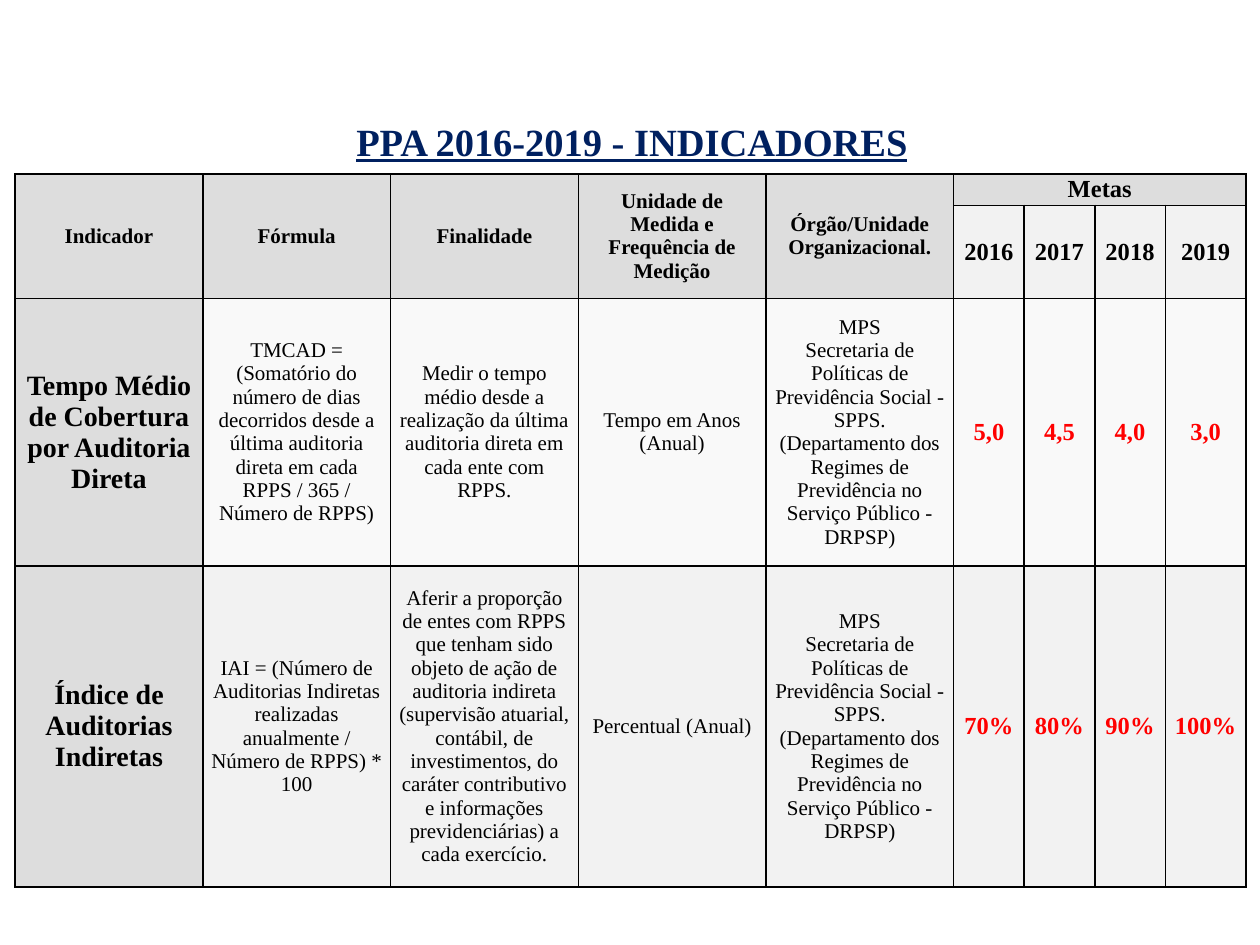
import pptx
import pptx.util
import pptx.dml.color
import pptx.enum.text
import pptx.oxml
import pptx.oxml.ns
from pptx.util import Inches

NAVY = pptx.dml.color.RGBColor(0x00, 0x20, 0x60)
BLACK = pptx.dml.color.RGBColor(0x00, 0x00, 0x00)
RED = pptx.dml.color.RGBColor(0xFF, 0x00, 0x00)
HEADER_GREY = pptx.dml.color.RGBColor(0xDD, 0xDD, 0xDD)
LIGHT_GREY = pptx.dml.color.RGBColor(0xF2, 0xF2, 0xF2)
PALE_GREY = pptx.dml.color.RGBColor(0xF9, 0xF9, 0xF9)


def write_text(frame, text, size=12, bold=False, color=BLACK, underline=None, spacing=None):
    """Write centred text, one paragraph for each line."""
    frame.text = text
    for paragraph in frame.paragraphs:
        paragraph.alignment = pptx.enum.text.PP_ALIGN.CENTER
        paragraph.line_spacing = spacing
        for run in paragraph.runs:
            run.font.name = "Times New Roman"
            run.font.size = pptx.util.Pt(size)
            run.font.bold = bold
            run.font.underline = underline
            run.font.color.rgb = color


def add_borders(cell):
    """Give a cell thin black lines on all four sides."""
    properties = cell._tc.get_or_add_tcPr()
    for position, side in enumerate(("lnL", "lnR", "lnT", "lnB")):
        properties.insert(position, pptx.oxml.parse_xml(
            f'<a:{side} {pptx.oxml.ns.nsdecls("a")} w="12700"><a:solidFill>'
            f'<a:srgbClr val="{BLACK}"/></a:solidFill></a:{side}>'))


presentation = pptx.Presentation()
presentation.slide_width = Inches(10)
presentation.slide_height = Inches(7.5)
slide = presentation.slides.add_slide(presentation.slide_layouts[5])

# Title
title = slide.shapes.title
title.left, title.top = Inches(0), Inches(0.92)
title.width, title.height = Inches(10.03), Inches(0.44)
title_frame = title.text_frame
title_frame.margin_left = title_frame.margin_right = Inches(0.07)
title_frame.margin_top = title_frame.margin_bottom = Inches(0.04)
title_frame.vertical_anchor = pptx.enum.text.MSO_ANCHOR.MIDDLE
write_text(title_frame, "PPA 2016-2019 - INDICADORES", size=22, bold=True,
           color=NAVY, underline=True, spacing=0.9)

# Table contents
agency = ("MPS\nSecretaria de Políticas de Previdência Social - SPPS.\n"
          "(Departamento dos Regimes de Previdência no Serviço Público - DRPSP)")
headings = ["Indicador", "Fórmula", "Finalidade",
            "Unidade de Medida e Frequência de Medição",
            "Órgão/Unidade Organizacional."]
contents = [
    headings + ["Metas", "", "", ""],
    [""] * len(headings) + ["2016", "2017", "2018", "2019"],
    ["Tempo Médio de Cobertura por Auditoria Direta",
     "TMCAD = (Somatório do número de dias decorridos desde a última auditoria direta "
     "em cada RPPS / 365 / Número de RPPS)",
     "Medir o tempo médio desde a realização da última auditoria direta em cada ente com RPPS.",
     "Tempo em Anos (Anual)", agency, "5,0", "4,5", "4,0", "3,0"],
    ["Índice de Auditorias Indiretas",
     "IAI = (Número de Auditorias Indiretas realizadas anualmente / Número de RPPS) * 100",
     "Aferir a proporção de entes com RPPS que tenham sido objeto de ação de auditoria "
     "indireta (supervisão atuarial, contábil, de investimentos, do caráter contributivo "
     "e informações previdenciárias) a cada exercício.",
     "Percentual (Anual)", agency, "70%", "80%", "90%", "100%"],
]
column_widths = [1.49] * 5 + [0.56] * 3 + [0.64]
row_heights = [0.25, 0.6, 2.12, 2.55]
row_fills = [HEADER_GREY, LIGHT_GREY, PALE_GREY, LIGHT_GREY]
first_target = len(headings)

# Table grid
indicators = slide.shapes.add_table(
    len(row_heights), len(column_widths), Inches(0.12), Inches(1.38),
    Inches(sum(column_widths)), Inches(sum(row_heights))).table
for column, width in zip(indicators.columns, column_widths):
    column.width = Inches(width)
for row, height in zip(indicators.rows, row_heights):
    row.height = Inches(height)

# Merged headings
for index in range(first_target):
    indicators.cell(0, index).merge(indicators.cell(1, index))
indicators.cell(0, first_target).merge(indicators.cell(0, len(column_widths) - 1))

# Cell text and format
for row_index, row_texts in enumerate(contents):
    for column_index, text in enumerate(row_texts):
        cell = indicators.cell(row_index, column_index)
        is_heading = row_index < 2
        is_target = column_index >= first_target
        is_indicator = column_index == 0
        cell.margin_left = cell.margin_right = Inches(0.06)
        cell.margin_top = cell.margin_bottom = Inches(0)
        cell.vertical_anchor = pptx.enum.text.MSO_ANCHOR.MIDDLE
        cell.fill.solid()
        cell.fill.fore_color.rgb = HEADER_GREY if is_indicator else row_fills[row_index]
        add_borders(cell)
        if cell.is_spanned:
            continue
        if is_target:
            size = 14
        else:
            size = 16 if is_indicator and not is_heading else 12
        write_text(cell.text_frame, text, size=size,
                   bold=is_heading or is_target or is_indicator,
                   color=RED if is_target and not is_heading else BLACK)

presentation.save("out.pptx")
